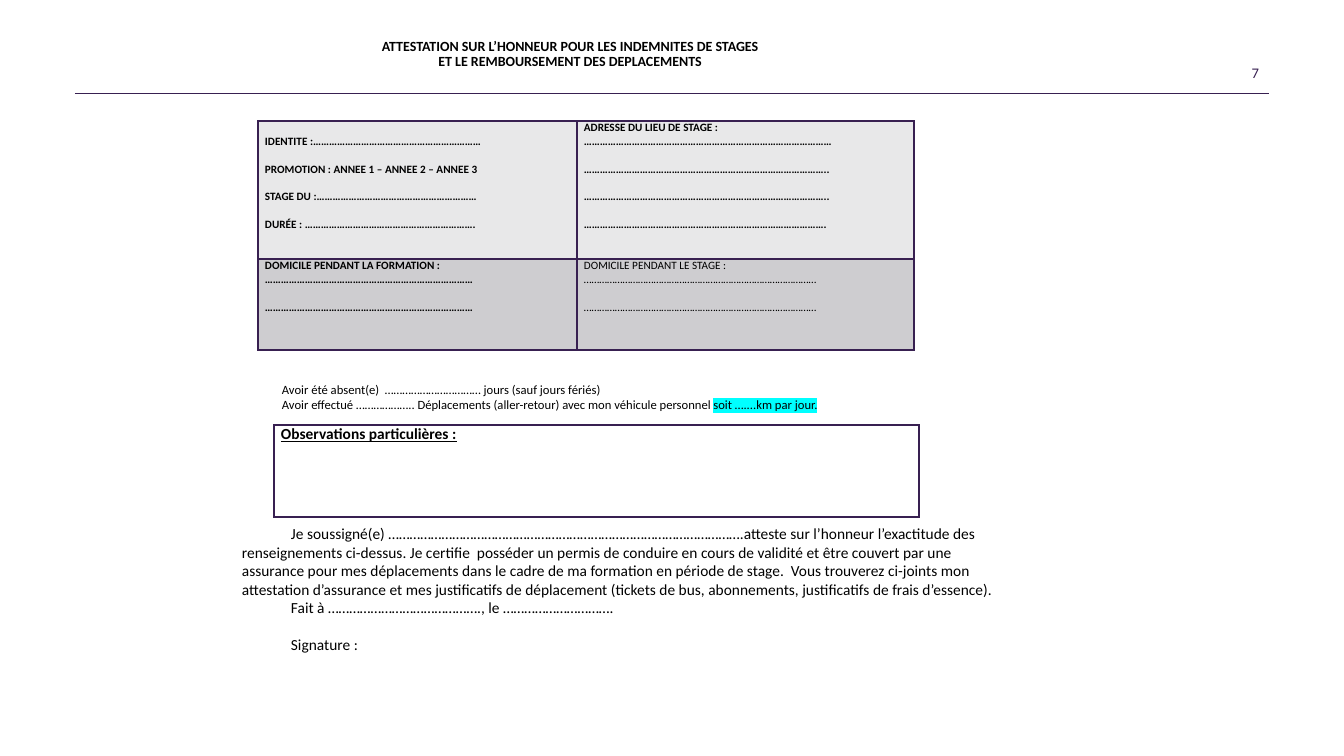
from dataclasses import dataclass

from lxml import etree
from pptx import Presentation
from pptx.dml.color import RGBColor
from pptx.enum.shapes import MSO_CONNECTOR
from pptx.enum.text import MSO_ANCHOR, MSO_AUTO_SIZE, PP_ALIGN
from pptx.oxml.ns import qn
from pptx.util import Pt

STRAIGHT = MSO_CONNECTOR.STRAIGHT
TOP, MIDDLE, BOTTOM = MSO_ANCHOR.TOP, MSO_ANCHOR.MIDDLE, MSO_ANCHOR.BOTTOM
LEFT, CENTER, RIGHT = PP_ALIGN.LEFT, PP_ALIGN.CENTER, PP_ALIGN.RIGHT
NO_AUTO_SIZE = MSO_AUTO_SIZE.NONE
EMU_PER_PX = 914400 / 100.8
TITLE_ONLY = 5


@dataclass(frozen=True)
class Theme:
    font: str = "Calibri"
    text: str = "000000"
    accent: str = "382051"
    light_row: str = "E8E8E9"
    dark_row: str = "CECDD0"
    highlight: str = "00FFFF"
    form_size: float = 8
    note_size: float = 9
    title_size: float = 10
    number_size: float = 10.5
    body_size: float = 11
    line_height: float = 1.22


THEME = Theme()

TITLE = (
    "ATTESTATION SUR L’HONNEUR POUR LES INDEMNITES DE STAGES",
    "ET LE REMBOURSEMENT DES DEPLACEMENTS",
)
IDENTITY = (
    "IDENTITE :………………………………………………………",
    "PROMOTION : ANNEE 1 – ANNEE 2 – ANNEE 3",
    "STAGE DU :……………………………………………………",
    "DURÉE : ……………………………………………………….",
)
PLACEMENT_ADDRESS = (
    "ADRESSE DU LIEU DE STAGE :",
    "…………………………………………………………………………………",
    "………………………………………………………………………………..",
    "………………………………………………………………………………..",
    "……………………………………………………………………………….",
)
TRAINING_HOME = (
    "DOMICILE PENDANT LA FORMATION :",
    "……………………………………………………………………",
    "……………………………………………………………………",
)
PLACEMENT_HOME = (
    "DOMICILE PENDANT LE STAGE :",
    "………………………………………………………………………………",
    "………………………………………………………………………………",
)
ABSENCE = "Avoir été absent(e)  …………………………… jours (sauf jours fériés)"
TRIPS = "Avoir effectué ……………….. Déplacements (aller-retour) avec mon véhicule personnel "
DISTANCE = "soit …....km par jour."
STATEMENT = (
    "Je soussigné(e) ……………………………………………………………………………………….atteste sur l’honneur "
    "l’exactitude des renseignements ci-dessus. Je certifie  posséder un permis de "
    "conduire en cours de validité et être couvert par une assurance pour mes "
    "déplacements dans le cadre de ma formation en période de stage.  Vous trouverez "
    "ci-joints mon attestation d’assurance et mes justificatifs de déplacement (tickets "
    "de bus, abonnements, justificatifs de frais d’essence)."
)
PLACE_AND_DATE = "Fait à ……………………………………., le …………………………."
SIGNATURE = "Signature :"


def px(length):
    return round(length * EMU_PER_PX)


def write(frame, lines, size, color=THEME.text, bold=False, align=LEFT, gap_from=None):
    """Fill a text frame; lines from index gap_from on follow a one-line gap."""
    for index, line in enumerate(lines):
        paragraph = frame.paragraphs[0] if index == 0 else frame.add_paragraph()
        paragraph.add_run().text = line
        paragraph.alignment = align
        if gap_from is not None and index >= gap_from:
            paragraph.space_before = Pt(round(size * THEME.line_height, 1))
        font = paragraph.font
        font.name, font.size, font.bold = THEME.font, Pt(size), bold
        font.color.rgb = RGBColor.from_string(color)


def add_text(slide, box, lines, size, anchor=TOP, **style):
    frame = slide.shapes.add_textbox(*map(px, box)).text_frame
    frame.word_wrap = True
    frame.vertical_anchor = anchor
    write(frame, lines, size, **style)
    return frame


def add_header(slide, box):
    left, top, width, height = box
    title = slide.shapes.title
    title.left, title.top = px(left + 76), px(top)
    title.width, title.height = px(838), px(46)
    frame = title.text_frame
    frame.auto_size = NO_AUTO_SIZE
    frame.vertical_anchor = TOP
    write(frame, TITLE, THEME.title_size, bold=True, align=CENTER)
    for paragraph in frame.paragraphs:
        paragraph.line_spacing = 0.9

    number_box = (left + width - 302, top + 19, 302, 40)
    add_text(slide, number_box, ["7"], THEME.number_size, MIDDLE,
             color=THEME.accent, align=RIGHT)

    bottom = px(top + height)
    rule = slide.shapes.add_connector(STRAIGHT, px(left), bottom, px(left + width), bottom)
    rule.line.color.rgb = RGBColor.from_string(THEME.accent)
    rule.line.width = Pt(0.5)
    etree.SubElement(rule._element.spPr, qn("a:effectLst"))


def add_plain_table(slide, box, column_widths, row_heights):
    shape = slide.shapes.add_table(len(row_heights), len(column_widths), *map(px, box))
    table = shape.table
    table.first_row = table.horz_banding = False
    for column, width in zip(table.columns, column_widths):
        column.width = px(width)
    for row, height in zip(table.rows, row_heights):
        row.height = px(height)
    return table


def format_cell(cell, fill=None, margin_top=0, bottom_width=1):
    cell.margin_left = cell.margin_right = px(7)
    cell.margin_top, cell.margin_bottom = px(margin_top), 0
    properties = cell._tc.get_or_add_tcPr()
    for side, width in (("L", 1), ("R", 1), ("T", 1), ("B", bottom_width)):
        line = etree.SubElement(properties, qn(f"a:ln{side}"), w=str(Pt(width)))
        solid = etree.SubElement(line, qn("a:solidFill"))
        etree.SubElement(solid, qn("a:srgbClr"), val=THEME.accent)
    if fill:
        cell.fill.solid()
        cell.fill.fore_color.rgb = RGBColor.from_string(fill)
    else:
        cell.fill.background()


def add_identity_table(slide, box):
    table = add_plain_table(slide, box, (319, 337), (138, 91))
    cells = (
        (0, 0, IDENTITY, 1, 14, True),
        (0, 1, PLACEMENT_ADDRESS, 2, 0, True),
        (1, 0, TRAINING_HOME, 2, 0, True),
        (1, 1, PLACEMENT_HOME, 2, 0, False),
    )
    for row, column, lines, gap_from, margin_top, bold in cells:
        cell = table.cell(row, column)
        format_cell(cell, (THEME.light_row, THEME.dark_row)[row], margin_top)
        write(cell.text_frame, lines, THEME.form_size, bold=bold, gap_from=gap_from)


def add_travel_note(slide, box):
    frame = add_text(slide, box, (ABSENCE, TRIPS), THEME.note_size)
    distance = frame.paragraphs[1].add_run()
    distance.text = DISTANCE
    highlight = etree.SubElement(distance._r.get_or_add_rPr(), qn("a:highlight"))
    etree.SubElement(highlight, qn("a:srgbClr"), val=THEME.highlight)


def add_observations(slide, box):
    cell = add_plain_table(slide, box, box[2:3], box[3:]).cell(0, 0)
    format_cell(cell, bottom_width=2)
    write(cell.text_frame, ["Observations particulières :"], THEME.body_size, bold=True)
    cell.text_frame.paragraphs[0].font.underline = True


def add_statement(slide, box):
    lines = (STATEMENT, PLACE_AND_DATE, SIGNATURE)
    frame = add_text(slide, box, lines, THEME.body_size, BOTTOM, gap_from=2)
    for paragraph in frame.paragraphs:
        paragraph._p.get_or_add_pPr().set("indent", str(px(49)))


def main():
    presentation = Presentation()
    presentation.slide_width, presentation.slide_height = px(1344), px(756)
    slide = presentation.slides.add_slide(presentation.slide_layouts[TITLE_ONLY])
    add_header(slide, (75, 34, 1194, 59))
    add_identity_table(slide, (258, 121, 656, 229))
    add_travel_note(slide, (272, 377, 672, 40))
    add_observations(slide, (274, 425, 645, 92))
    add_statement(slide, (232, 519, 777, 140))
    presentation.save("out.pptx")


if __name__ == "__main__":
    main()
